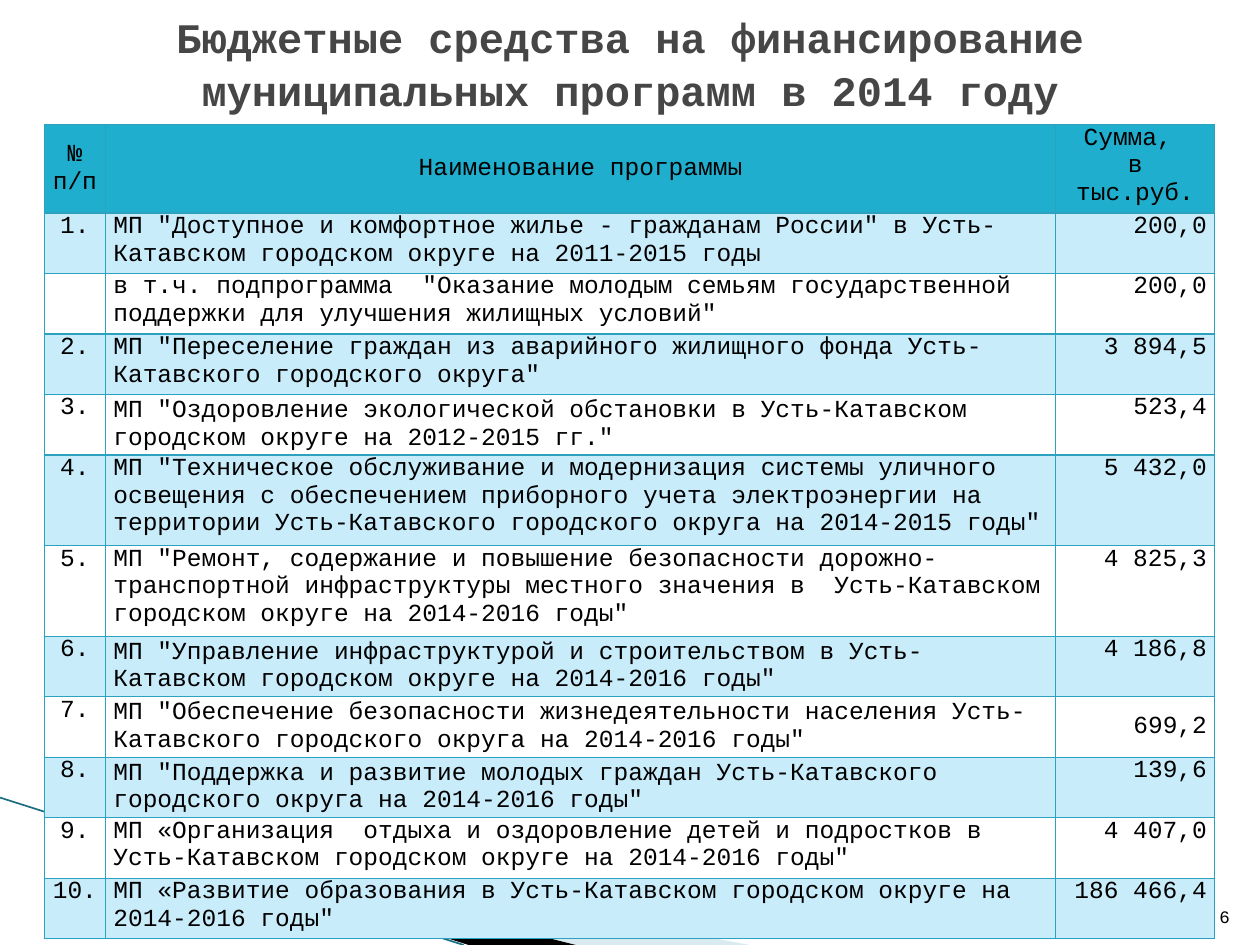
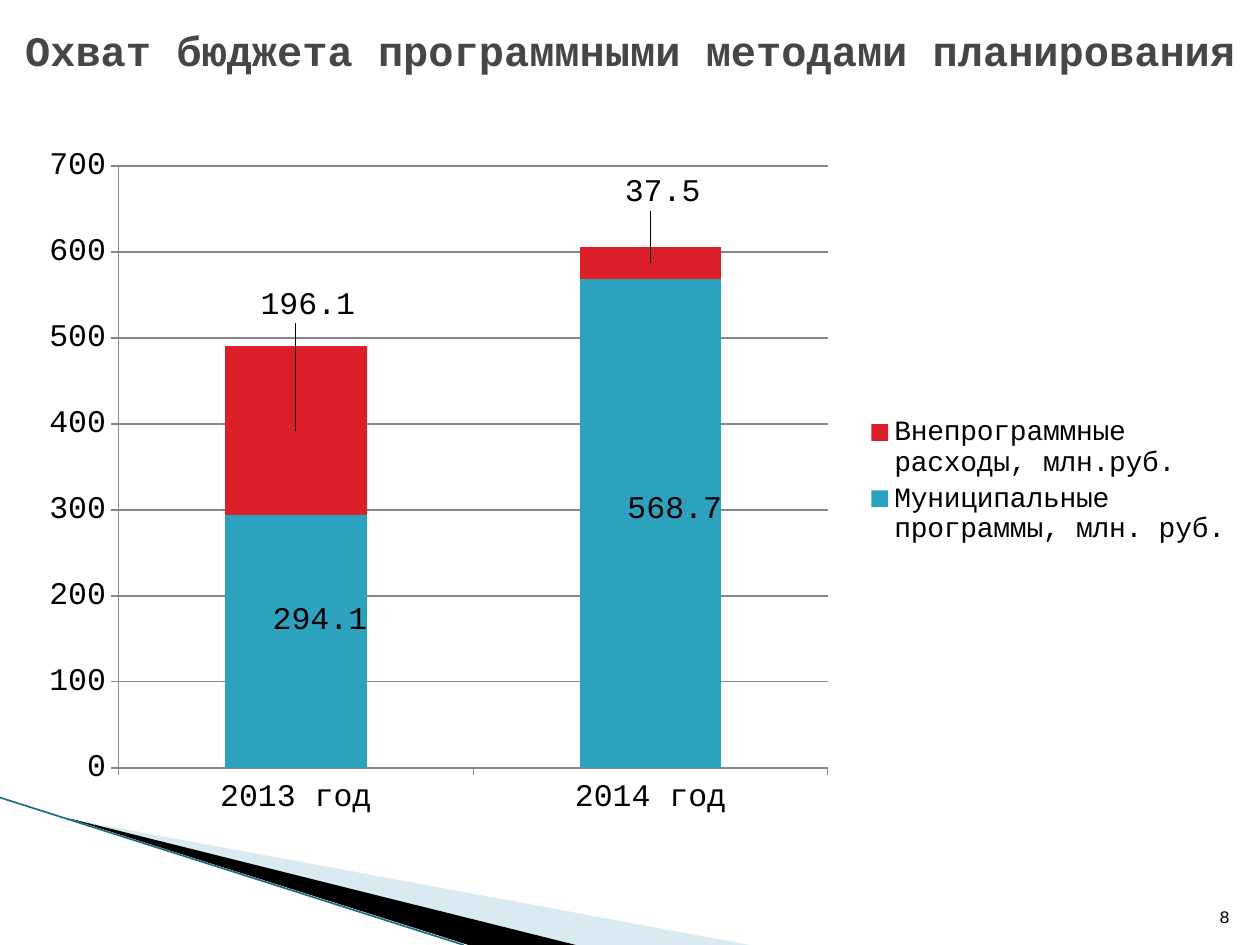
import pptx
import pptx.chart.data
import pptx.dml.color
import pptx.enum.chart
import pptx.enum.text
import pptx.oxml
import pptx.oxml.ns
import pptx.util
from lxml import etree

Inches, Pt = pptx.util.Inches, pptx.util.Pt
ALIGN = pptx.enum.text.PP_ALIGN
ANCHOR = pptx.enum.text.MSO_ANCHOR
qn = pptx.oxml.ns.qn

# Content: number, programme, amount, and which cells are centred vertically
PROGRAMS_TITLE = "Бюджетные средства на финансирование муниципальных программ в 2014 году"
HEADER = ("№ п/п", "Наименование программы", "Сумма, \nв тыс.руб.")
PROGRAMS = [
    ("1.", 'МП "Доступное и комфортное жилье - гражданам России" в Усть-Катавском городском округе на 2011-2015 годы', "200,0"),
    ("", 'в т.ч. подпрограмма  "Оказание молодым семьям государственной поддержки для улучшения жилищных условий"', "200,0"),
    ("2.", 'МП "Переселение граждан из аварийного жилищного фонда Усть-Катавского городского округа"', "3 894,5"),
    ("3.", 'МП "Оздоровление экологической обстановки в Усть-Катавском городском округе на 2012-2015 гг."', "523,4"),
    ("4.", 'МП "Техническое обслуживание и модернизация системы уличного освещения с обеспечением приборного учета электроэнергии на территории Усть-Катавского городского округа на 2014-2015 годы"', "5 432,0"),
    ("5.", 'МП "Ремонт, содержание и повышение безопасности дорожно-транспортной инфраструктуры местного значения в  Усть-Катавском городском округе на 2014-2016 годы"', "4 825,3"),
    ("6.", 'МП "Управление инфраструктурой и строительством в Усть-Катавском городском округе на 2014-2016 годы"', "4 186,8"),
    ("7.", 'МП "Обеспечение безопасности жизнедеятельности населения Усть-Катавского городского округа на 2014-2016 годы"', "699,2"),
    ("8.", 'МП "Поддержка и развитие молодых граждан Усть-Катавского городского округа на 2014-2016 годы"', "139,6"),
    ("9.", 'МП «Организация  отдыха и оздоровление детей и подростков в  Усть-Катавском городском округе на 2014-2016 годы"', "4 407,0"),
    ("10.", 'МП «Развитие образования в Усть-Катавском городском округе на 2014-2016 годы"', "186 466,4"),
]
MIDDLE_CELLS = {(0, 0), (0, 1), (4, 1), (7, 1), (8, 1), (8, 2), (9, 1)}
TALL_ROWS = (5, 6)

COVERAGE_TITLE = "Охват бюджета программными методами планирования"
YEARS = ("2013 год", "2014 год")
# Name, colour, values, label shifts as shares of the chart
SPENDING = [
    ("Муниципальные программы, млн. руб.", "2DA2BF", (294.1, 568.7),
     ((0.02, -0.03), (0.02, -0.02))),
    ("Внепрограммные расходы, млн.руб.", "DA1F28", (196.1, 37.5),
     ((0.01, -0.18), (0.01, -0.1))),
]

# Shared look
FONT = "Courier New"
BLACK, TITLE_COLOR, GRID_COLOR = "000000", "464646", "868686"
BORDER, HEADER_FILL, BAND_FILLS = "2DA2BF", "1FAECD", ("FFFFFF", "C9ECFB")
SWOOSHES = [  # corners in inches, colour, opacity in percent
    (((0.55, 6.5), (5.95, 7.5), (4.56, 7.5)), "A0CBDC", 40),
    (((0.53, 6.49), (4.57, 7.5), (3.72, 7.5)), BLACK, 100),
]
EDGE_LINE = (0, 6.33, 3.68, 7.5)


def rgb(value):
    return pptx.dml.color.RGBColor.from_string(value)


def set_font(font, size, color=BLACK, bold=False):
    font.name, font.size, font.bold = FONT, Pt(size), bold
    font.color.rgb = rgb(color)


def write(frame, text, size, align, color=BLACK, bold=False):
    frame.text = text
    frame.word_wrap = True
    for paragraph in frame.paragraphs:
        paragraph.alignment = align
        set_font(paragraph.font, size, color, bold)


def add_corner(slide):
    """Swooshes and thin line in the lower left corner."""
    for corners, color, opacity in SWOOSHES:
        points = [(x * 100, y * 100) for x, y in corners]
        builder = slide.shapes.build_freeform(*points[0], scale=Inches(0.01))
        builder.add_line_segments(points[1:])
        shape = builder.convert_to_shape()
        shape.shadow.inherit = False
        shape.line.fill.background()
        shape.fill.solid()
        shape.fill.fore_color.rgb = rgb(color)
        if opacity < 100:
            tint = shape.element.spPr.find(".//" + qn("a:srgbClr"))
            etree.SubElement(tint, qn("a:alpha"), val=str(opacity * 1000))
    line = slide.shapes.add_connector(1, *[Inches(v) for v in EDGE_LINE])
    line.line.color.rgb = rgb("1B6E82")
    line.line.width = Pt(0.95)
    etree.SubElement(line.element.spPr, qn("a:effectLst"))


def add_slide(presentation, title_text, title_top, title_height, number):
    slide = presentation.slides.add_slide(presentation.slide_layouts[5])
    add_corner(slide)
    title = slide.shapes.title
    title.left, title.width = 0, presentation.slide_width
    title.top, title.height = Inches(title_top), Inches(title_height)
    write(title.text_frame, title_text, 24, ALIGN.CENTER, TITLE_COLOR, True)
    title.text_frame.vertical_anchor = ANCHOR.MIDDLE
    title.text_frame.auto_size = pptx.enum.text.MSO_AUTO_SIZE.NONE
    title.text_frame.paragraphs[0].line_spacing = 1.06
    box = slide.shapes.add_textbox(Inches(9.46), Inches(7.01), Inches(0.4), Inches(0.4))
    write(box.text_frame, str(number), 10, ALIGN.RIGHT)
    box.text_frame.vertical_anchor = ANCHOR.BOTTOM
    return slide


def style_cell(cell, fill):
    cell.fill.solid()
    cell.fill.fore_color.rgb = rgb(fill)
    cell.margin_left = cell.margin_right = Inches(0.06)
    cell.margin_top = cell.margin_bottom = 0
    properties = cell._tc.get_or_add_tcPr()
    for index, side in enumerate(("a:lnL", "a:lnR", "a:lnT", "a:lnB")):
        border = etree.Element(qn(side), w=str(Pt(0.75)))
        solid = etree.SubElement(border, qn("a:solidFill"))
        etree.SubElement(solid, qn("a:srgbClr"), val=BORDER)
        properties.insert(index, border)


def add_program_table(slide):
    rows = [HEADER] + PROGRAMS
    widths = (0.49, 7.54, 1.26)
    heights = [0.66] + [0.72 if r in TALL_ROWS else 0.48 for r in range(1, len(rows))]
    table = slide.shapes.add_table(
        len(rows), len(widths), Inches(0.35), Inches(0.99),
        Inches(sum(widths)), Inches(sum(heights))).table
    for column, width in zip(table.columns, widths):
        column.width = Inches(width)
    for r, (row, height) in enumerate(zip(rows, heights)):
        table.rows[r].height = Inches(height)
        aligns = (ALIGN.CENTER, ALIGN.LEFT, ALIGN.RIGHT) if r else (ALIGN.CENTER,) * 3
        for c, (text, align) in enumerate(zip(row, aligns)):
            cell = table.cell(r, c)
            write(cell.text_frame, text, 14, align)
            cell.vertical_anchor = ANCHOR.MIDDLE if (r, c) in MIDDLE_CELLS else ANCHOR.TOP
            style_cell(cell, BAND_FILLS[r % 2] if r else HEADER_FILL)


def manual_layout(x, y, w=None, h=None, inner=False, edge=True):
    """Layout element, lengths as shares of the chart."""
    layout = pptx.oxml.parse_xml(
        '<c:layout xmlns:c="http://schemas.openxmlformats.org/drawingml/2006/chart">'
        "<c:manualLayout/></c:layout>")
    parts = [("layoutTarget", "inner")] if inner else []
    parts += [("xMode", "edge"), ("yMode", "edge")] if edge else []
    parts += [("x", x), ("y", y), ("w", w), ("h", h)]
    for name, value in parts:
        if value is not None:
            etree.SubElement(layout[0], qn("c:" + name), val=str(value))
    return layout


def place(element, layout, index):
    for old in element.findall(qn("c:layout")):
        element.remove(old)
    element.insert(index, layout)


def add_coverage_chart(slide):
    data = pptx.chart.data.CategoryChartData(number_format="General")
    data.categories = YEARS
    for name, _, values, _ in SPENDING:
        data.add_series(name, values)
    chart = slide.shapes.add_chart(
        pptx.enum.chart.XL_CHART_TYPE.COLUMN_STACKED,
        Inches(0.2), Inches(1.07), Inches(9.61), Inches(5.51), data).chart
    chart.has_title = False
    set_font(chart.font, 18)
    plot = chart.plots[0]
    plot.gap_width, plot.overlap, plot.vary_by_categories = 150, 100, False

    # Axes and grid
    for axis in (chart.category_axis, chart.value_axis):
        axis.format.line.color.rgb = rgb(GRID_COLOR)
        axis.major_tick_mark = pptx.enum.chart.XL_TICK_MARK.OUTSIDE
    scale = chart.value_axis
    scale.minimum_scale, scale.maximum_scale, scale.major_unit = 0, 700, 100
    scale.has_major_gridlines = True
    scale.major_gridlines.format.line.color.rgb = rgb(GRID_COLOR)

    # Columns and their shifted labels
    for series, (_, color, values, shifts) in zip(plot.series, SPENDING):
        series.format.fill.solid()
        series.format.fill.fore_color.rgb = rgb(color)
        series.data_labels.show_value = True
        set_font(series.data_labels.font, 18)
        for index in range(len(values)):
            label = series.points[index].data_label
            label.position = pptx.enum.chart.XL_LABEL_POSITION.CENTER
            set_font(label.font, 18)
        for element, shift in zip(series._element.iter(qn("c:dLbl")), shifts):
            place(element, manual_layout(*shift, edge=False), 1)

    # Legend and plot area
    chart.has_legend = True
    chart.legend.position = pptx.enum.chart.XL_LEGEND_POSITION.RIGHT
    chart.legend.include_in_layout = False
    set_font(chart.legend.font, 16)
    place(chart.legend._element, manual_layout(0.69, 0.4, 0.31, 0.2), 1)
    plot_area = chart._chartSpace.find(".//" + qn("c:plotArea"))
    place(plot_area, manual_layout(0.077, 0.045, 0.586, 0.867, inner=True), 0)


def main():
    presentation = pptx.Presentation()
    presentation.slide_width, presentation.slide_height = Inches(10), Inches(7.5)
    add_program_table(add_slide(presentation, PROGRAMS_TITLE, 0.04, 0.9, 6))
    add_coverage_chart(add_slide(presentation, COVERAGE_TITLE, 0.13, 0.5, 8))
    presentation.save("out.pptx")


if __name__ == "__main__":
    main()
